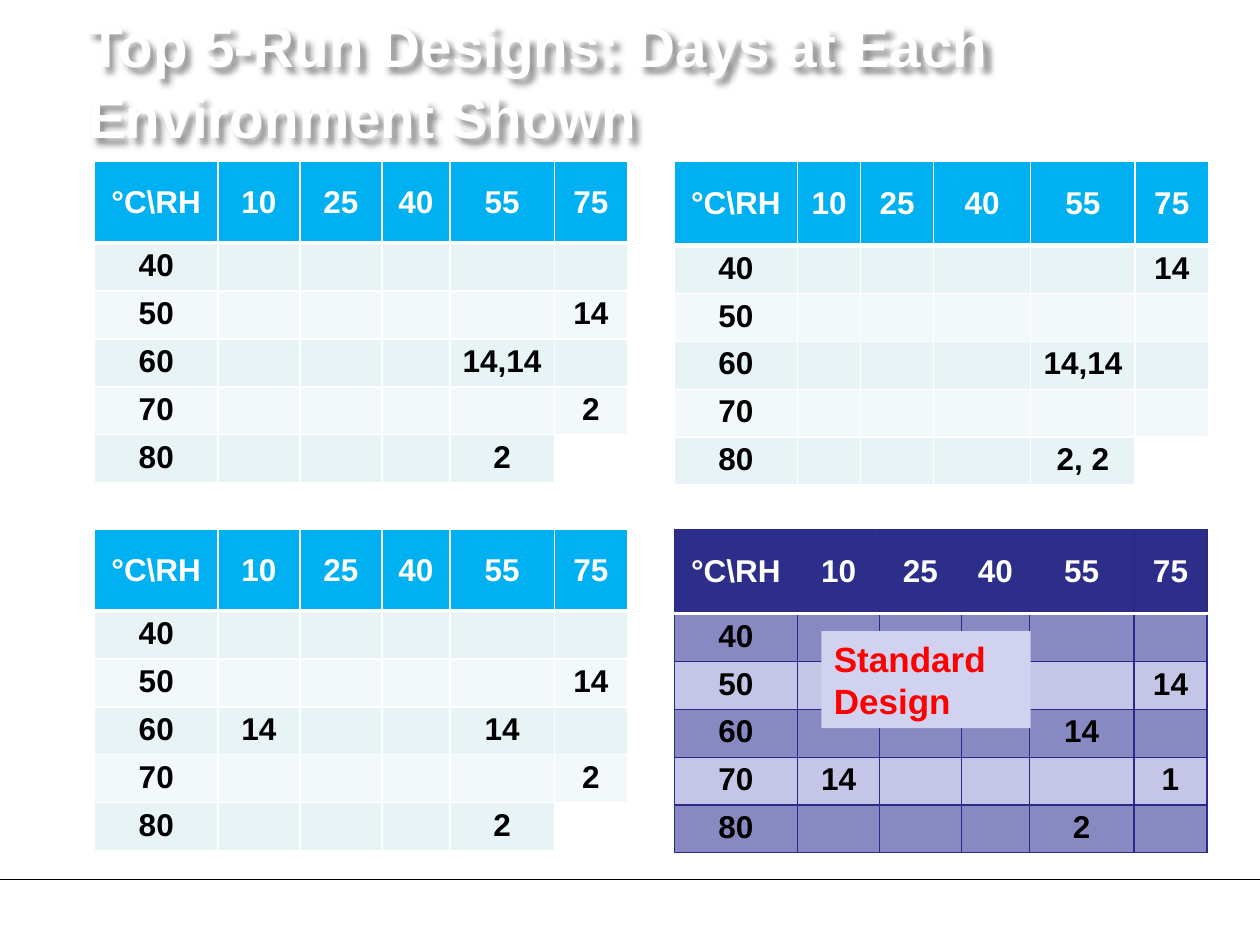
import pptx
import pptx.util
import pptx.dml.color
import pptx.enum.shapes
import pptx.enum.text
import pptx.oxml
import pptx.oxml.ns
from lxml import etree

Inches = pptx.util.Inches
Pt = pptx.util.Pt
ALIGN = pptx.enum.text.PP_ALIGN
ANCHOR = pptx.enum.text.MSO_ANCHOR

COLORS = {
    "white": "FFFFFF", "black": "000000", "red": "FF0000",
    "cyan": "00B0F0", "mist": "E7F3F4", "pale": "F3F9FA",
    "navy": "2D2D8A", "navy_line": "2A2A89", "violet": "8888C2",
    "lilac": "C5C5E8", "lavender": "D1D1F0",
}
TITLE = "Top 5-Run Designs: Days at Each Environment Shown"
LABEL = "Standard Design"
HUMIDITIES = ["10", "25", "40", "55", "75"]
TEMPERATURES = ["40", "50", "60", "70", "80"]
EVEN_COLUMNS = [0.98, 0.65, 0.65, 0.54, 0.83, 0.58]
SHIFTED_COLUMNS = [0.98, 0.5, 0.58, 0.77, 0.83, 0.58]
LEFTS, TOPS = [0.75, 5.35], [1.28, 4.2]
HEADER_HEIGHTS = [0.65, 0.67]
ROW_HEIGHT = 0.38

LIGHT = {"header": "cyan", "bands": ["mist", "pale"], "line": "white",
         "width": 1, "rule": 3, "corner": "white"}
STANDARD = {"header": "navy", "bands": ["violet", "lilac"], "line": "navy_line",
            "width": 0.75, "rule": 2, "corner": "violet"}

DESIGNS = [
    {"place": (0, 1), "look": LIGHT, "columns": EVEN_COLUMNS,
     "days": {("50", "75"): "14", ("60", "10"): "14", ("60", "55"): "14",
              ("70", "75"): "2", ("80", "55"): "2"}},
    {"place": (1, 1), "look": STANDARD, "columns": EVEN_COLUMNS,
     "days": {("50", "75"): "14", ("60", "55"): "14", ("70", "10"): "14",
              ("70", "75"): "1", ("80", "55"): "2"}},
    {"place": (0, 0), "look": LIGHT, "columns": EVEN_COLUMNS,
     "days": {("50", "75"): "14", ("60", "55"): "14,14",
              ("70", "75"): "2", ("80", "55"): "2"}},
    {"place": (1, 0), "look": LIGHT, "columns": SHIFTED_COLUMNS,
     "days": {("40", "75"): "14", ("60", "55"): "14,14", ("80", "55"): "2, 2"}},
]


def rgb(name):
    return pptx.dml.color.RGBColor.from_string(COLORS[name])


def set_font(paragraph, size, color):
    font = paragraph.font
    font.name, font.size, font.bold = "Arial", Pt(size), True
    font.color.rgb = rgb(color)


def set_borders(cell, edges):
    properties = cell._tc.get_or_add_tcPr()
    for index, (edge, (color, width)) in enumerate(edges.items()):
        properties.insert(index, pptx.oxml.parse_xml(
            f'<a:{edge} {pptx.oxml.ns.nsdecls("a")} w="{Pt(width)}">'
            f'<a:solidFill><a:srgbClr val="{COLORS[color]}"/></a:solidFill></a:{edge}>'))


def add_design(slide, design):
    look, columns = design["look"], design["columns"]
    side, level = design["place"]
    heights = [HEADER_HEIGHTS[side]] + [ROW_HEIGHT] * len(TEMPERATURES)
    rows = [["°C\\RH"] + HUMIDITIES] + [
        [t] + [design["days"].get((t, h), "") for h in HUMIDITIES] for t in TEMPERATURES]
    table = slide.shapes.add_table(
        len(rows), len(columns), Inches(LEFTS[side]), Inches(TOPS[level]),
        Inches(sum(columns)), Inches(sum(heights))).table
    table.horz_banding = False
    for column, width in zip(table.columns, columns):
        column.width = Inches(width)
    for r, (values, height) in enumerate(zip(rows, heights)):
        table.rows[r].height = Inches(height)
        for c, value in enumerate(values):
            cell = table.cell(r, c)
            cell.margin_left = cell.margin_right = Inches(0.08)
            cell.margin_top = cell.margin_bottom = Inches(0.04)
            cell.vertical_anchor = ANCHOR.TOP if r else ANCHOR.MIDDLE
            fill = look["bands"][(r - 1) % 2] if r else look["header"]
            if r == len(rows) - 1 and c == len(values) - 1:
                fill = look["corner"]
            cell.fill.solid()
            cell.fill.fore_color.rgb = rgb(fill)
            grid, rule = (look["line"], look["width"]), ("white", look["rule"])
            set_borders(cell, {"lnL": grid, "lnR": grid,
                               "lnT": rule if r == 1 else grid,
                               "lnB": rule if r == 0 else grid})
            cell.text = value
            paragraph = cell.text_frame.paragraphs[0]
            paragraph.alignment = ALIGN.CENTER
            set_font(paragraph, 18, "black" if r else "white")


def add_title(slide):
    title = slide.shapes.title
    title.left, title.top = Inches(0.6), Inches(0)
    title.width, title.height = Inches(9), Inches(1.25)
    title.text_frame.text = TITLE
    title.text_frame.word_wrap = True
    title.text_frame.auto_size = pptx.enum.text.MSO_AUTO_SIZE.NONE
    title.text_frame.vertical_anchor = ANCHOR.MIDDLE
    paragraph = title.text_frame.paragraphs[0]
    paragraph.alignment = ALIGN.LEFT
    paragraph.line_spacing = 1.04
    set_font(paragraph, 32.4, "white")
    title._element.spPr.append(pptx.oxml.parse_xml(
        f'<a:effectLst {pptx.oxml.ns.nsdecls("a")}>'
        f'<a:outerShdw blurRad="{Pt(4)}" dist="{Pt(4)}" dir="2700000" algn="tl">'
        f'<a:srgbClr val="{COLORS["black"]}"><a:alpha val="43000"/></a:srgbClr>'
        '</a:outerShdw></a:effectLst>'))


def add_footer_rule(slide):
    rule = slide.shapes.add_connector(
        pptx.enum.shapes.MSO_CONNECTOR.STRAIGHT,
        Inches(0), Inches(6.98), Inches(10), Inches(6.98))
    rule.line.color.rgb = rgb("black")
    rule.line.width = Pt(0.5)
    etree.SubElement(rule._element.spPr, pptx.oxml.ns.qn("a:effectLst"))


def add_label(slide):
    label = slide.shapes.add_shape(
        pptx.enum.shapes.MSO_SHAPE.RECTANGLE,
        Inches(6.52), Inches(5.01), Inches(1.66), Inches(0.77))
    label.shadow.inherit = False
    label.fill.solid()
    label.fill.fore_color.rgb = rgb("lavender")
    label.line.fill.background()
    frame = label.text_frame
    frame.text = LABEL
    frame.word_wrap = True
    frame.auto_size = pptx.enum.text.MSO_AUTO_SIZE.SHAPE_TO_FIT_TEXT
    frame.vertical_anchor = ANCHOR.TOP
    frame.paragraphs[0].alignment = ALIGN.LEFT
    set_font(frame.paragraphs[0], 20, "red")


def main():
    deck = pptx.Presentation()
    deck.slide_width, deck.slide_height = Inches(10), Inches(7.5)
    slide = deck.slides.add_slide(deck.slide_layouts[5])
    add_footer_rule(slide)
    add_title(slide)
    for design in DESIGNS:
        add_design(slide, design)
    add_label(slide)
    deck.save("out.pptx")


if __name__ == "__main__":
    main()
